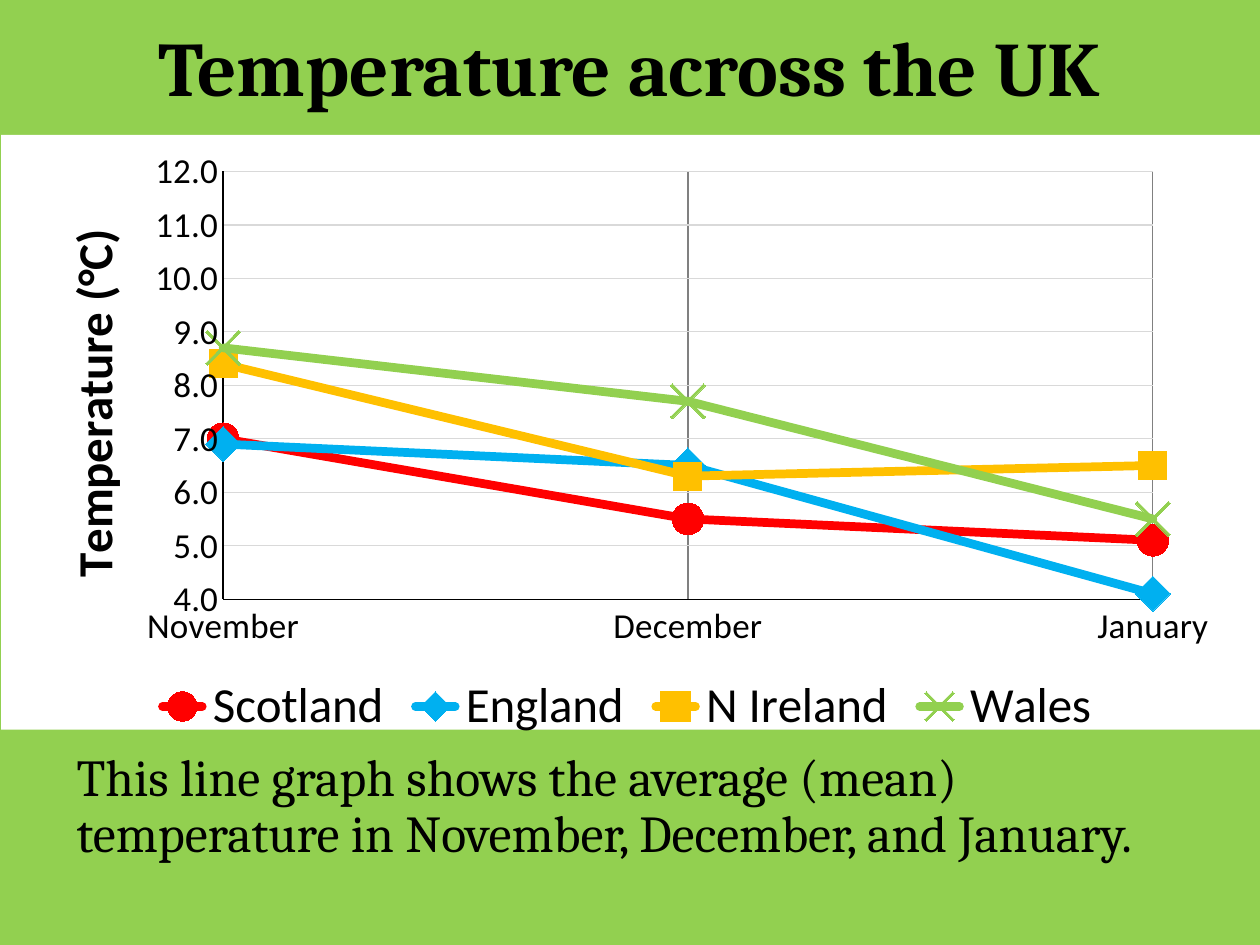
from dataclasses import dataclass

import pptx
import pptx.chart.data
import pptx.dml.color
import pptx.enum.chart
import pptx.enum.shapes
import pptx.enum.text
import pptx.oxml
import pptx.oxml.ns
import pptx.util
from pptx.util import Inches

GREEN = "92D050"
BLACK = "000000"
MARKER = pptx.enum.chart.XL_MARKER_STYLE
qn = pptx.oxml.ns.qn


@dataclass
class Region:
    name: str
    temperatures: tuple[float, ...]
    color: str
    marker: MARKER
    marker_size: int
    marker_filled: bool = True


MONTHS = ("November", "December", "January")
REGIONS = (
    Region("Scotland", (7.0, 5.5, 5.1), "FF0000", MARKER.CIRCLE, 18),
    Region("England", (6.9, 6.5, 4.1), "00B0F0", MARKER.DIAMOND, 20),
    Region("N Ireland", (8.4, 6.3, 6.5), "FFC000", MARKER.SQUARE, 16),
    Region("Wales", (8.7, 7.7, 5.5), GREEN, MARKER.X, 20, marker_filled=False),
)


def rgb(color: str) -> pptx.dml.color.RGBColor:
    return pptx.dml.color.RGBColor.from_string(color)


def set_fill(fill, color: str) -> None:
    fill.solid()
    fill.fore_color.rgb = rgb(color)


def set_line(line, color: str, width: float) -> None:
    set_fill(line.fill, color)
    line.width = pptx.util.Pt(width)


def set_font(font, size: float, name: str = "Calibri", bold: bool = False) -> None:
    font.name = name
    font.size = pptx.util.Pt(size)
    font.bold = bold
    font.color.rgb = rgb(BLACK)


def add_text(page, text: str, left: float, top: float, width: float, height: float, *,
             size: float, bold: bool = False, spacing: float = 1.0,
             align=pptx.enum.text.PP_ALIGN.LEFT,
             anchor=pptx.enum.text.MSO_ANCHOR.TOP) -> None:
    box = page.shapes.add_textbox(Inches(left), Inches(top), Inches(width), Inches(height))
    frame = box.text_frame
    frame.word_wrap = True
    frame.vertical_anchor = anchor
    para = frame.paragraphs[0]
    para.alignment = align
    para.line_spacing = spacing
    span = para.add_run()
    span.text = text
    set_font(span.font, size, "Cambria", bold)


def place(element, after=None, **fractions: float) -> None:
    """Give a chart part a manual layout in fractions of the chart."""
    layout = element.find(qn("c:layout"))
    if layout is None:
        layout = element.makeelement(qn("c:layout"), {})
        if after is None:
            element.insert(0, layout)
        else:
            element.find(qn(after)).addnext(layout)
    for child in list(layout):
        layout.remove(child)
    manual = pptx.oxml.ns.nsdecls("c")
    target = '<c:layoutTarget val="inner"/>' if "w" in fractions else ""
    modes = '<c:xMode val="edge"/><c:yMode val="edge"/>'
    values = "".join(f'<c:{key} val="{value}"/>' for key, value in fractions.items())
    layout.append(pptx.oxml.parse_xml(
        f"<c:manualLayout {manual}>{target}{modes}{values}</c:manualLayout>"))


def start_lines_on_axis(value_axis) -> None:
    element = value_axis._element
    crossing = element.find(qn("c:crossBetween"))
    if crossing is None:
        crossing = element.makeelement(qn("c:crossBetween"), {})
        element.find(qn("c:crosses")).addnext(crossing)
    crossing.set("val", "midCat")


def format_axis(axis, grid_color: str) -> None:
    axis.major_tick_mark = axis.minor_tick_mark = pptx.enum.chart.XL_TICK_MARK.NONE
    axis.has_major_gridlines = True
    set_line(axis.major_gridlines.format.line, grid_color, 0.75)
    set_line(axis.format.line, BLACK, 0.75)
    set_font(axis.tick_labels.font, 20)


def format_series(series, region: Region) -> None:
    series.smooth = False
    set_line(series.format.line, region.color, 5)
    series._element.find(f"{qn('c:spPr')}/{qn('a:ln')}").set("cap", "rnd")
    marker = series.marker
    marker.style = region.marker
    marker.size = region.marker_size
    set_line(marker.format.line, region.color, 0.75)
    if region.marker_filled:
        set_fill(marker.format.fill, region.color)
    else:
        marker.format.fill.background()


def add_temperature_chart(page) -> None:
    data = pptx.chart.data.CategoryChartData(number_format="0.0")
    data.categories = MONTHS
    for region in REGIONS:
        data.add_series(region.name, region.temperatures)
    chart = page.shapes.add_chart(
        pptx.enum.chart.XL_CHART_TYPE.LINE_MARKERS,
        Inches(0.12), Inches(1.07), Inches(9.71), Inches(4.85), data).chart
    set_font(chart.font, 12)
    chart.has_title = False
    chart.plots[0].vary_by_categories = False
    for series, region in zip(chart.plots[0].series, REGIONS):
        format_series(series, region)

    format_axis(chart.category_axis, "808080")
    value_axis = chart.value_axis
    format_axis(value_axis, "D9D9D9")
    value_axis.minimum_scale, value_axis.maximum_scale = 4, 12
    value_axis.major_unit = 1
    value_axis.tick_labels.number_format = "0.0"
    value_axis.tick_labels.number_format_is_linked = False
    start_lines_on_axis(value_axis)

    title = value_axis.axis_title
    span = title.text_frame.paragraphs[0].add_run()
    span.text = "Temperature (°C)"
    set_font(span.font, 28, bold=True)
    place(title._element, after="c:tx", x=0.03, y=0.14)
    place(chart._chartSpace.chart.plotArea, x=0.17, y=0.06, w=0.76, h=0.7)

    chart.has_legend = True
    chart.legend.position = pptx.enum.chart.XL_LEGEND_POSITION.BOTTOM
    chart.legend.include_in_layout = False
    set_font(chart.legend.font, 28)


def main() -> None:
    deck = pptx.Presentation()
    deck.slide_width, deck.slide_height = Inches(10), Inches(7.5)
    page = deck.slides.add_slide(deck.slide_layouts[6])
    set_fill(page.background.fill, GREEN)

    panel = page.shapes.add_shape(pptx.enum.shapes.MSO_SHAPE.RECTANGLE,
                                  Inches(0.01), Inches(1.07), Inches(10), Inches(4.72))
    panel.shadow.inherit = False
    set_fill(panel.fill, "FFFFFF")
    panel.line.fill.background()

    add_text(page, "Temperature across the UK", 0.5, -0.1, 9, 1.25, size=44, bold=True,
             align=pptx.enum.text.PP_ALIGN.CENTER, anchor=pptx.enum.text.MSO_ANCHOR.MIDDLE)
    add_text(page, "This line graph shows the average (mean) temperature in November, "
             "December, and January.", 0.51, 5.92, 9, 1.53, size=29.6, spacing=0.9)
    add_temperature_chart(page)
    deck.save("out.pptx")


if __name__ == "__main__":
    main()
